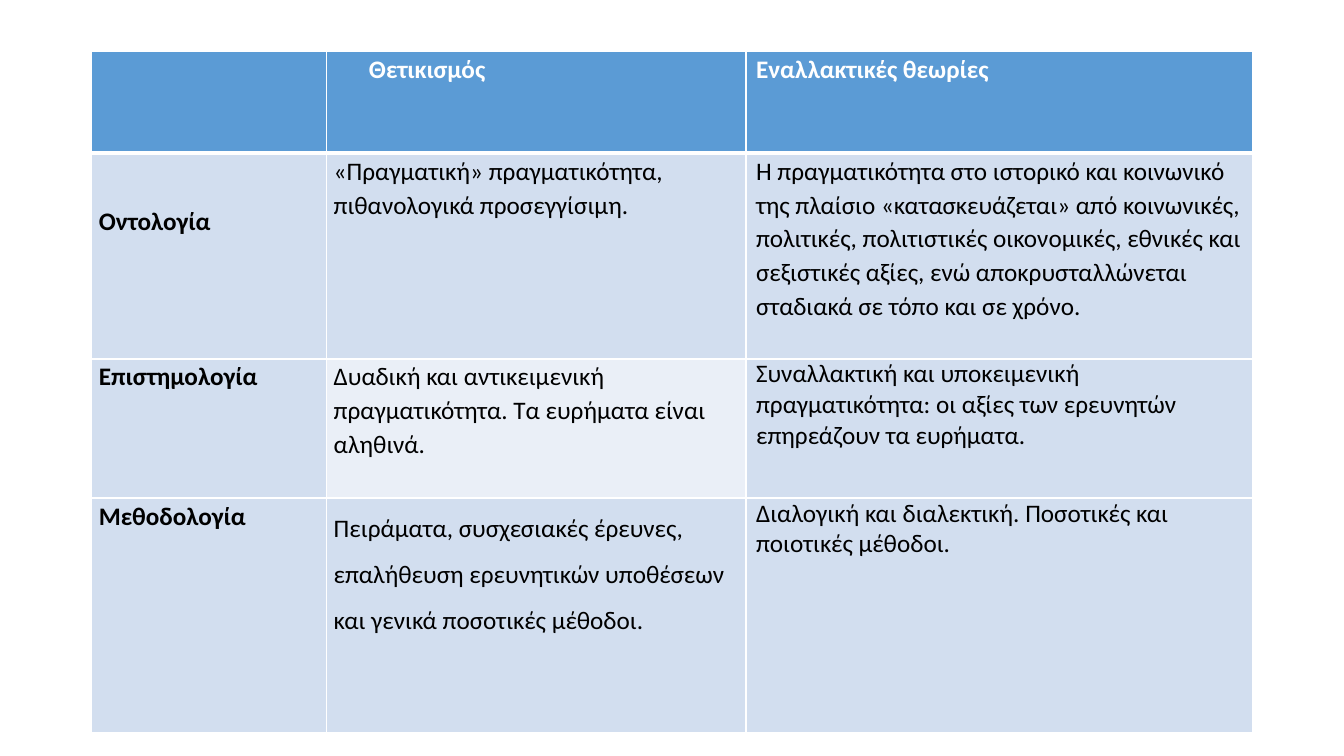
from lxml import etree
from pptx import Presentation
from pptx.dml.color import RGBColor
from pptx.enum.text import MSO_ANCHOR
from pptx.oxml.ns import qn
from pptx.util import Pt

TOP = MSO_ANCHOR.TOP
WHITE = RGBColor(0xFF, 0xFF, 0xFF)
BLACK = RGBColor(0x00, 0x00, 0x00)
HEADER_BLUE = RGBColor(0x5B, 0x9B, 0xD5)
BAND_BLUE = RGBColor(0xD2, 0xDE, 0xEF)
PALE_BLUE = RGBColor(0xEA, 0xEF, 0xF7)

COLUMN_WIDTHS = (167.8, 299.5, 362.2)
ROW_HEIGHTS = (72.7, 146.9, 99.4, 167.8)
THEORIES_INDENT = 2.2

HEADINGS = ("", "Θετικισμός", "Εναλλακτικές θεωρίες")
COMPARISON = (
    ("Οντολογία",
     "«Πραγματική» πραγματικότητα, πιθανολογικά προσεγγίσιμη.",
     "Η πραγματικότητα στο ιστορικό και κοινωνικό της πλαίσιο «κατασκευάζεται» "
     "από κοινωνικές, πολιτικές, πολιτιστικές οικονομικές, εθνικές και "
     "σεξιστικές αξίες, ενώ αποκρυσταλλώνεται σταδιακά σε τόπο και σε χρόνο."),
    ("Επιστημολογία",
     "Δυαδική και αντικειμενική πραγματικότητα. Τα ευρήματα είναι αληθινά.",
     "Συναλλακτική και υποκειμενική πραγματικότητα: οι αξίες των ερευνητών "
     "επηρεάζουν τα ευρήματα."),
    ("Μεθοδολογία",
     "Πειράματα, συσχεσιακές έρευνες, επαλήθευση ερευνητικών υποθέσεων και "
     "γενικά ποσοτικές μέθοδοι.",
     "Διαλογική και διαλεκτική. Ποσοτικές και ποιοτικές μέθοδοι."),
)
# Line spacing that differs from the usual 1.1, by (row, column)
LINE_SPACING = {(2, 2): 1.0, (3, 1): 1.5, (3, 2): 1.0}


def set_format(target, values):
    for name, value in values.items():
        setattr(target, name, value)


def add_borders(cell, top, bottom):
    properties = cell._tc.get_or_add_tcPr()
    for side, width in (("L", 1), ("R", 1), ("T", top), ("B", bottom)):
        border = etree.SubElement(properties, qn(f"a:ln{side}"), w=str(Pt(width)))
        fill = etree.SubElement(border, qn("a:solidFill"))
        etree.SubElement(fill, qn("a:srgbClr"), val=str(WHITE))


def format_cell(cell, fill, top_border, bottom_border, top_margin=0):
    add_borders(cell, top_border, bottom_border)
    cell.fill.solid()
    cell.fill.fore_color.rgb = fill
    set_format(cell, {
        "margin_left": Pt(5), "margin_right": Pt(5),
        "margin_top": Pt(top_margin), "margin_bottom": Pt(0),
        "vertical_anchor": TOP,
    })


def write_text(cell, text, color, bold, spacing, margin=0, first_line=0):
    paragraph = cell.text_frame.paragraphs[0]
    paragraph.text = text
    indents = paragraph._p.get_or_add_pPr()
    indents.set("marL", str(Pt(margin)))
    indents.set("indent", str(Pt(first_line)))
    set_format(paragraph, {"line_spacing": spacing, "space_after": Pt(6)})
    font = paragraph.runs[0].font
    set_format(font, {"name": "Calibri", "size": Pt(18), "bold": bold})
    font.color.rgb = color


def fill_header(table):
    for column, heading in enumerate(HEADINGS):
        cell = table.cell(0, column)
        format_cell(cell, HEADER_BLUE, 1, 3)
        if heading:
            write_text(cell, heading, WHITE, True, 1.1,
                       margin=THEORIES_INDENT if column == 2 else 0,
                       first_line=25.2 if column == 1 else 0)


def fill_comparison(table):
    for row, texts in enumerate(COMPARISON, start=1):
        for column, text in enumerate(texts):
            cell = table.cell(row, column)
            # The first aspect label sits one line lower than the others
            format_cell(cell,
                        PALE_BLUE if (row, column) == (2, 1) else BAND_BLUE,
                        3 if row == 1 else 1, 1,
                        top_margin=36 if (row, column) == (1, 0) else 0)
            write_text(cell, text, BLACK, column == 0,
                       LINE_SPACING.get((row, column), 1.1),
                       margin=THEORIES_INDENT if column == 2 else 0)


def add_comparison_table(slide):
    table = slide.shapes.add_table(
        len(ROW_HEIGHTS), len(COLUMN_WIDTHS), Pt(65.6), Pt(36.8),
        Pt(sum(COLUMN_WIDTHS)), Pt(sum(ROW_HEIGHTS))).table
    for column, width in zip(table.columns, COLUMN_WIDTHS):
        column.width = Pt(width)
    for row, height in zip(table.rows, ROW_HEIGHTS):
        row.height = Pt(height)
    return table


def main():
    presentation = Presentation()
    set_format(presentation, {"slide_width": Pt(960), "slide_height": Pt(540)})
    # The slide has no title, so it uses the blank layout
    slide = presentation.slides.add_slide(presentation.slide_layouts[6])

    # Table of paradigms
    table = add_comparison_table(slide)
    fill_header(table)
    fill_comparison(table)

    presentation.save("out.pptx")


if __name__ == "__main__":
    main()
